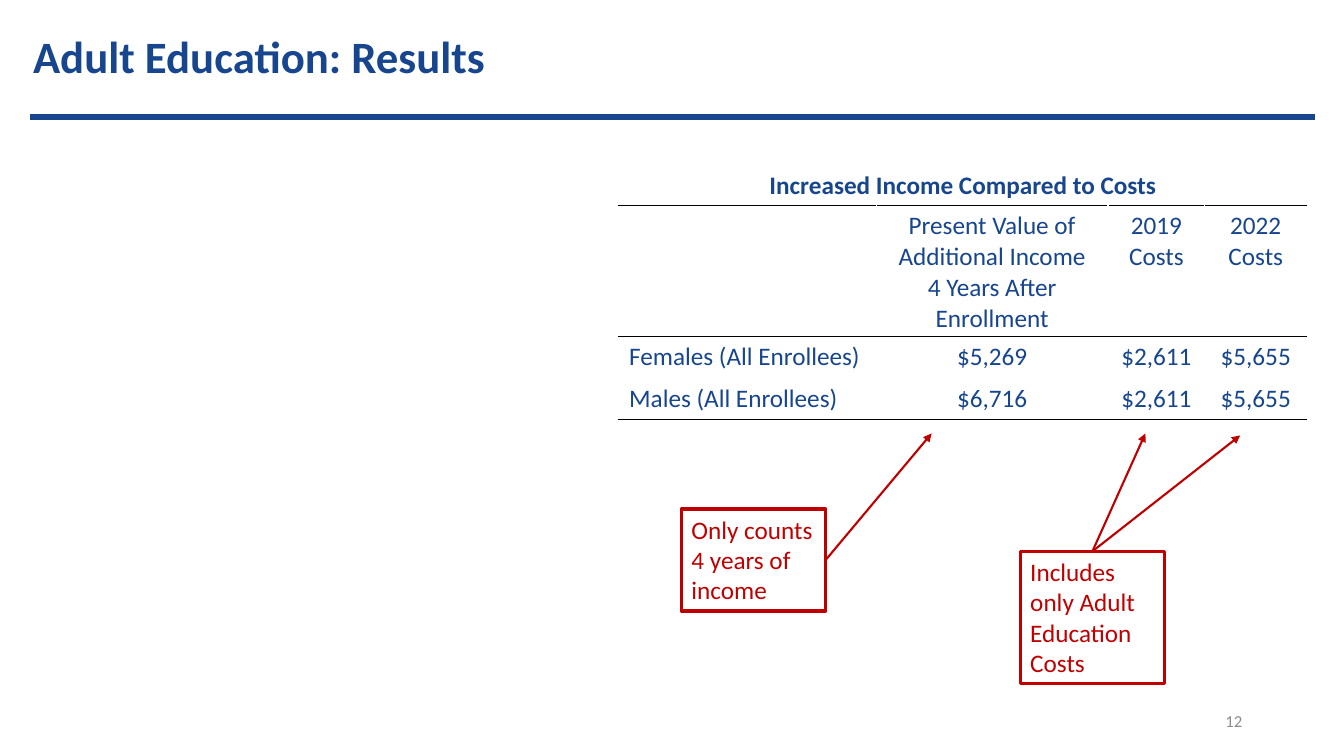
import pptx
import pptx.dml.color
import pptx.enum.shapes
import pptx.enum.text
import pptx.oxml
import pptx.oxml.ns
import pptx.util
from pptx.util import Inches

ALIGN = pptx.enum.text.PP_ALIGN
ANCHOR = pptx.enum.text.MSO_ANCHOR
NAVY, RED, GRAY, BLACK, WHITE = "17468E", "C00000", "8C8C8C", "000000", "FFFFFF"


def color(hex_code):
    return pptx.dml.color.RGBColor.from_string(hex_code)


class SlideBuilder:
    font = "Calibri"
    body_size = 18

    def __init__(self, slide):
        self.slide = slide

    def add_lines(self, frame, lines, ink, size=body_size, bold=False, align=ALIGN.LEFT):
        frame.word_wrap = True
        for index, line in enumerate(lines):
            paragraph = frame.add_paragraph() if index else frame.paragraphs[0]
            paragraph.alignment = align
            run = paragraph.add_run()
            run.text = line
            run.font.name = self.font
            run.font.size = pptx.util.Pt(size)
            run.font.bold = bold
            run.font.color.rgb = color(ink)

    def text(self, box, line, ink, size, anchor=ANCHOR.TOP, **style):
        frame = self.slide.shapes.add_textbox(*map(Inches, box)).text_frame
        frame.vertical_anchor = anchor
        self.add_lines(frame, [line], ink, size, **style)

    def line(self, start, end, ink, width, arrow=False):
        connector = self.slide.shapes.add_connector(
            pptx.enum.shapes.MSO_CONNECTOR.STRAIGHT, *map(Inches, start + end))
        connector.line.color.rgb = color(ink)
        connector.line.width = pptx.util.Pt(width)
        properties = connector.element.spPr
        if arrow:
            properties.get_or_add_ln().append(pptx.oxml.parse_xml(
                f'<a:tailEnd {pptx.oxml.ns.nsdecls("a")} type="triangle"/>'))
        properties.append(pptx.oxml.parse_xml(
            f'<a:effectLst {pptx.oxml.ns.nsdecls("a")}/>'))
        return connector

    def note(self, box, message, side, targets):
        note = self.slide.shapes.add_shape(
            pptx.enum.shapes.MSO_SHAPE.RECTANGLE, *map(Inches, box))
        note.shadow.inherit = False
        note.fill.background()
        note.line.color.rgb = color(RED)
        note.line.width = pptx.util.Pt(2.5)
        note.text_frame.vertical_anchor = ANCHOR.TOP
        self.add_lines(note.text_frame, [message], RED)
        for target in targets:
            arrow = self.line(box[:2], target, RED, 1.5, arrow=True)
            arrow.begin_connect(note, side)

    def borders(self, cell, top, bottom):
        properties = cell._tc.get_or_add_tcPr()
        edges = {"L": WHITE, "R": WHITE, "T": top, "B": bottom}
        for index, (edge, ink) in enumerate(edges.items()):
            properties.insert(index, pptx.oxml.parse_xml(
                f'<a:ln{edge} {pptx.oxml.ns.nsdecls("a")} w="12700">'
                f'<a:solidFill><a:srgbClr val="{ink}"/></a:solidFill></a:ln{edge}>'))

    def table(self, left, top, widths, heights, rows, rules):
        table = self.slide.shapes.add_table(
            len(rows), len(widths), Inches(left), Inches(top),
            Inches(sum(widths)), Inches(sum(heights))).table
        table.first_row = table.horz_banding = False
        for column, width in zip(table.columns, widths):
            column.width = Inches(width)
        for r, (height, values) in enumerate(zip(heights, rows)):
            table.rows[r].height = Inches(height)
            for c in range(len(widths)):
                cell = table.cell(r, c)
                cell.fill.background()
                self.borders(cell, rules[r], rules[r + 1])
                if c < len(values) and values[c]:
                    centered = r == 0 or c > 0
                    self.add_lines(cell.text_frame, values[c].split("\n"), NAVY, bold=r == 0,
                                   align=ALIGN.CENTER if centered else ALIGN.LEFT)
        table.cell(0, 0).merge(table.cell(0, len(widths) - 1))


def main():
    deck = pptx.Presentation()
    deck.slide_width, deck.slide_height = Inches(13.33), Inches(7.5)
    results = SlideBuilder(deck.slides.add_slide(deck.slide_layouts[6]))

    results.text((0.23, 0.24, 10.95, 0.64), "Adult Education: Results", NAVY, 32, bold=True)
    results.text((9.42, 6.95, 3, 0.4), "12", GRAY, 12, ANCHOR.MIDDLE, align=ALIGN.RIGHT)
    results.line((0.3, 1.16), (13.04, 1.16), NAVY, 4.5)

    income_and_costs = [
        ["Increased Income Compared to Costs"],
        ["", "Present Value of\nAdditional Income\n4 Years After Enrollment",
         "2019 Costs", "2022 Costs"],
        ["Females (All Enrollees)", "$5,269", "$2,611", "$5,655"],
        ["Males (All Enrollees)", "$6,716", "$2,611", "$5,655"],
    ]
    results.table(6.14, 1.64, [2.55, 2.3, 0.96, 1.01], [0.4, 1.3, 0.41, 0.41],
                  income_and_costs, [WHITE, BLACK, BLACK, WHITE, BLACK])

    results.note((6.76, 5.05, 1.43, 1.01), "Only counts 4 years of income", 3,
                 [(9.24, 4.3)])
    results.note((10.12, 5.47, 1.43, 1.31), "Includes only Adult Education Costs", 0,
                 [(11.36, 4.3), (12.3, 4.32)])
    deck.save("out.pptx")


if __name__ == "__main__":
    main()
